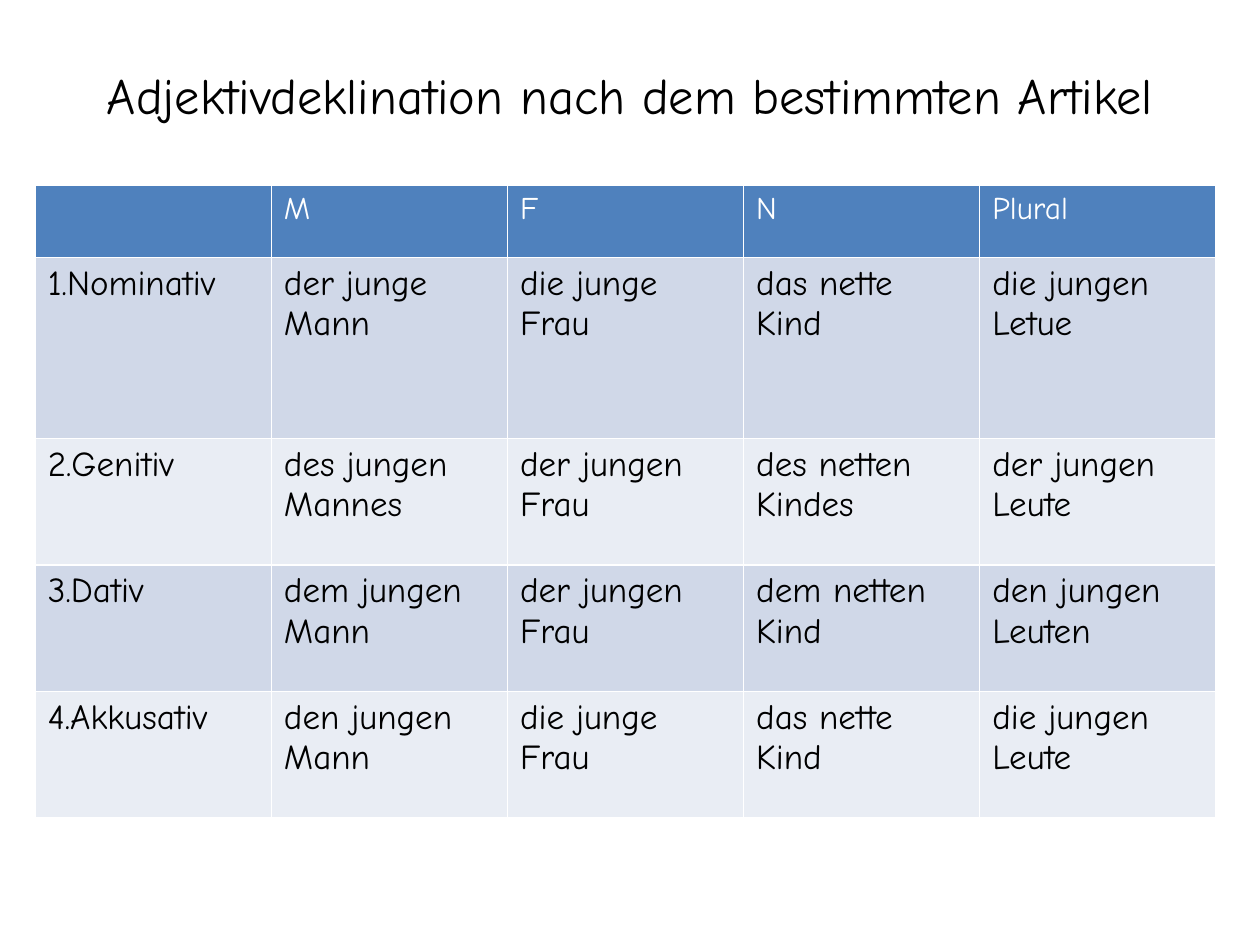
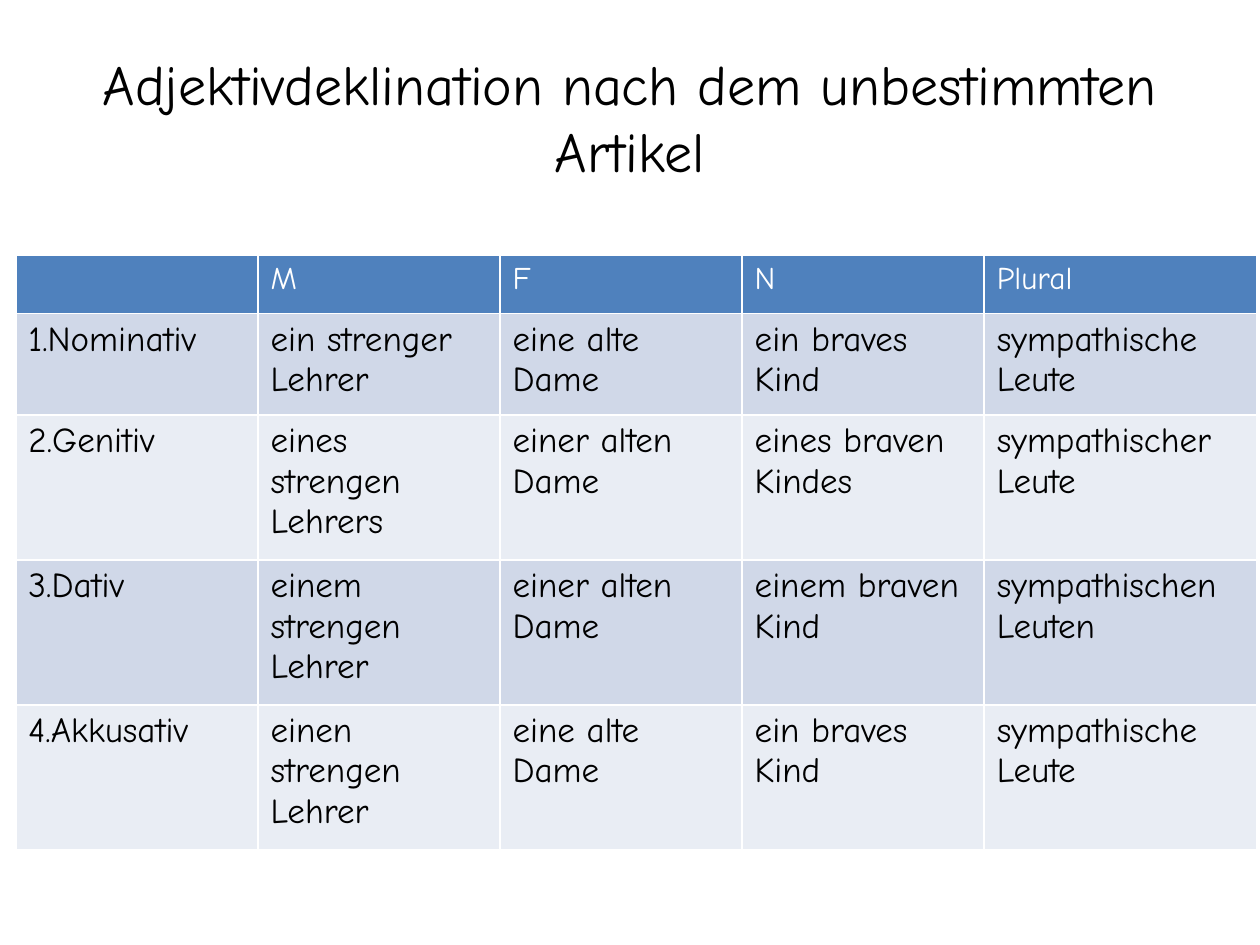
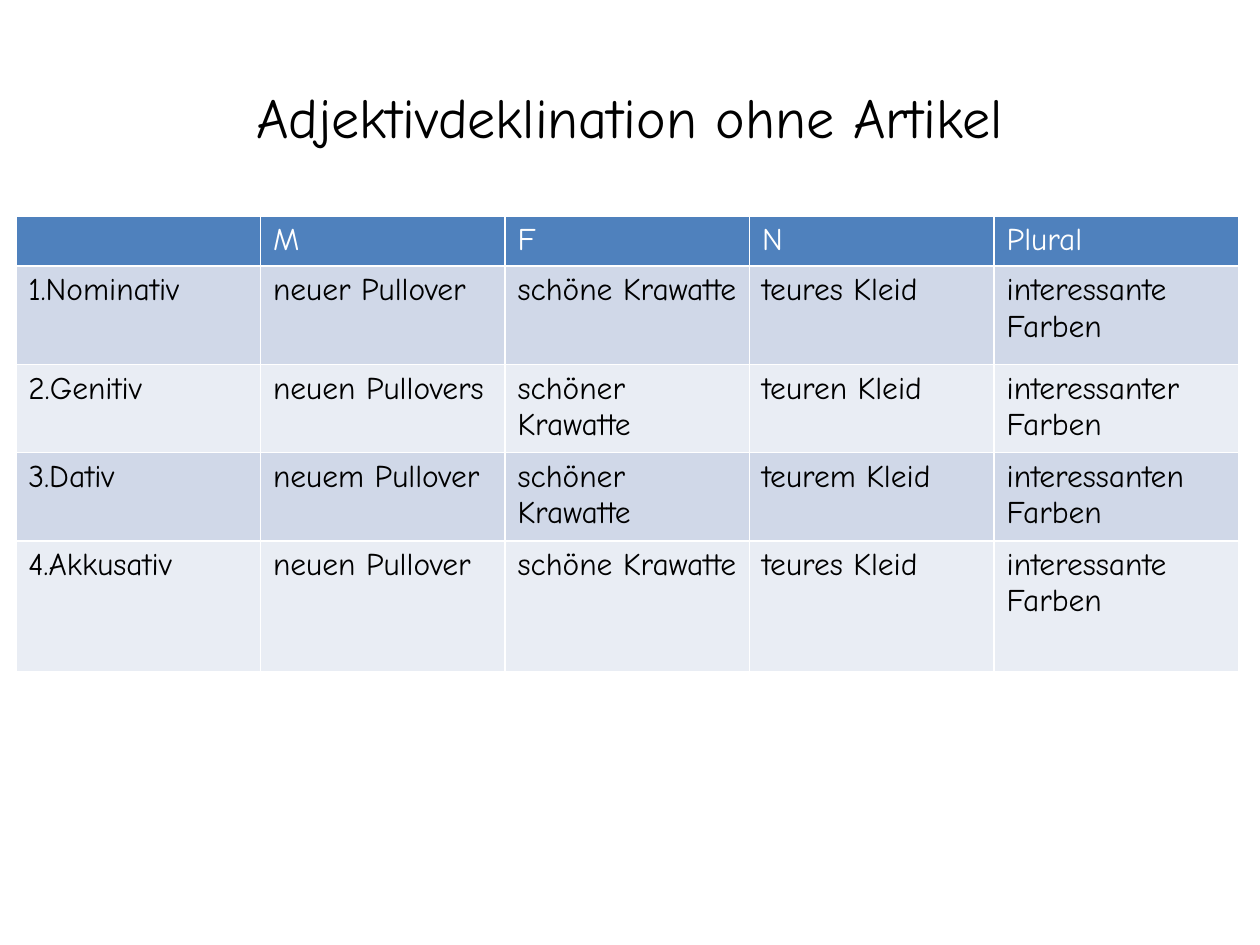
from dataclasses import dataclass

from lxml.etree import SubElement
from pptx import Presentation
from pptx.dml.color import RGBColor
from pptx.enum.text import MSO_ANCHOR as Anchor, PP_ALIGN as Align
from pptx.oxml import parse_xml
from pptx.oxml.ns import nsdecls, qn
from pptx.util import Cm, Pt

# Shared look
FONT = "Comic Neue"
BLACK = RGBColor(0x00, 0x00, 0x00)
WHITE = RGBColor(0xFF, 0xFF, 0xFF)
BLUE = RGBColor(0x4F, 0x81, 0xBD)
BANDS = (RGBColor(0xD0, 0xD8, 0xE8), RGBColor(0xE9, 0xED, 0xF4))
HEADER_SIZE = 18
INSET = 0.13
HEADER = ("", "M", "F", "N", "Plural")
CASES = ("1.Nominativ", "2.Genitiv", "3.Dativ", "4.Akkusativ")


@dataclass(frozen=True)
class Declension:
    """One slide; lengths in centimetres, sizes in points."""
    title: str
    left: float
    top: float
    cols: tuple[float, ...]
    rows: tuple[float, ...]
    forms: tuple[tuple[str, ...], ...]  # one row per case
    title_size: float = 32
    body_size: float = 20
    title_bottom: float = INSET


DECLENSIONS = (
    Declension(
        "Adjektivdeklination nach dem bestimmten Artikel",
        left=0.71, top=3.73, cols=(4.76,) * 5,
        rows=(1.46, 3.65) + (2.55,) * 3,
        forms=(
            ("der junge Mann", "die junge Frau", "das nette Kind", "die jungen Letue"),
            ("des jungen Mannes", "der jungen Frau", "des netten Kindes", "der jungen Leute"),
            ("dem jungen Mann", "der jungen Frau", "dem netten Kind", "den jungen Leuten"),
            ("den jungen Mann", "die junge Frau", "das nette Kind", "die jungen Leute"),
        ),
        title_size=28.8, title_bottom=1.02,
    ),
    Declension(
        "Adjektivdeklination nach dem unbestimmten Artikel",
        left=0.32, top=5.14, cols=(4.88,) * 4 + (5.49,),
        rows=(1.18, 2.05) + (2.92,) * 3,
        forms=(
            ("ein strenger Lehrer", "eine alte Dame", "ein braves Kind", "sympathische Leute"),
            ("eines strengen Lehrers", "einer alten Dame", "eines braven Kindes",
             "sympathischer Leute"),
            ("einem strengen Lehrer", "einer alten Dame", "einem braven Kind",
             "sympathischen Leuten"),
            ("einen strengen Lehrer", "eine alte Dame", "ein braves Kind", "sympathische Leute"),
        ),
    ),
    Declension(
        "Adjektivdeklination ohne Artikel",
        left=0.32, top=4.35, cols=(4.93,) * 5,
        rows=(0.92, 1.98, 1.63, 1.63, 2.64),
        forms=(
            ("neuer Pullover", "schöne Krawatte", "teures Kleid", "interessante Farben"),
            ("neuen Pullovers", "schöner Krawatte", "teuren Kleid", "interessanter Farben"),
            ("neuem Pullover", "schöner Krawatte", "teurem Kleid", "interessanten Farben"),
            ("neuen Pullover", "schöne Krawatte", "teures Kleid", "interessante Farben"),
        ),
        body_size=18,
    ),
)


def write(p, text: str, size: float, color: RGBColor) -> None:
    """Add one formatted run to a paragraph."""
    r = p.add_run()
    r.text = text
    for name, value in {"name": FONT, "size": Pt(size), "bold": False}.items():
        setattr(r.font, name, value)
    r.font.color.rgb = color


def add_title(s, d: Declension) -> None:
    tf = s.shapes.add_textbox(Cm(1.27), Cm(0.76), Cm(22.86), Cm(3.18)).text_frame
    formats = {"word_wrap": True, "vertical_anchor": Anchor.MIDDLE,
               "margin_bottom": Cm(d.title_bottom)}
    for name, value in formats.items():
        setattr(tf, name, value)
    p = tf.paragraphs[0]
    p.alignment = Align.CENTER
    write(p, d.title, d.title_size, BLACK)


def add_borders(cell) -> None:
    """Put a white line on each side, ahead of the cell fill."""
    tc_pr = cell._tc.get_or_add_tcPr()
    for i, side in enumerate("LRTB"):
        ln = parse_xml(f'<a:ln{side} {nsdecls("a")} w="{Pt(1)}"/>')
        fill = SubElement(ln, qn("a:solidFill"))
        SubElement(fill, qn("a:srgbClr"), val=str(WHITE))
        tc_pr.insert(i, ln)


def add_declension_table(s, d: Declension) -> None:
    frame = s.shapes.add_table(len(d.rows), len(d.cols), Cm(d.left), Cm(d.top),
                               Cm(sum(d.cols)), Cm(sum(d.rows)))
    table = frame.table
    for col, width in zip(table.columns, d.cols):
        col.width = Cm(width)
    for row, height in zip(table.rows, d.rows):
        row.height = Cm(height)

    lines = [HEADER] + [(case, *forms) for case, forms in zip(CASES, d.forms)]
    for i, line in enumerate(lines):
        if i == 0:
            fill, size, color = BLUE, HEADER_SIZE, WHITE
        else:
            fill, size, color = BANDS[(i - 1) % 2], d.body_size, BLACK
        for j, text in enumerate(line):
            cell = table.cell(i, j)
            cell.fill.solid()
            cell.fill.fore_color.rgb = fill
            add_borders(cell)
            if text:
                write(cell.text_frame.paragraphs[0], text, size, color)


def main() -> None:
    prs = Presentation()
    prs.slide_width, prs.slide_height = Cm(25.4), Cm(19.05)
    blank = prs.slide_layouts[6]
    for d in DECLENSIONS:
        s = prs.slides.add_slide(blank)
        add_title(s, d)
        add_declension_table(s, d)
    prs.save("out.pptx")


if __name__ == "__main__":
    main()
